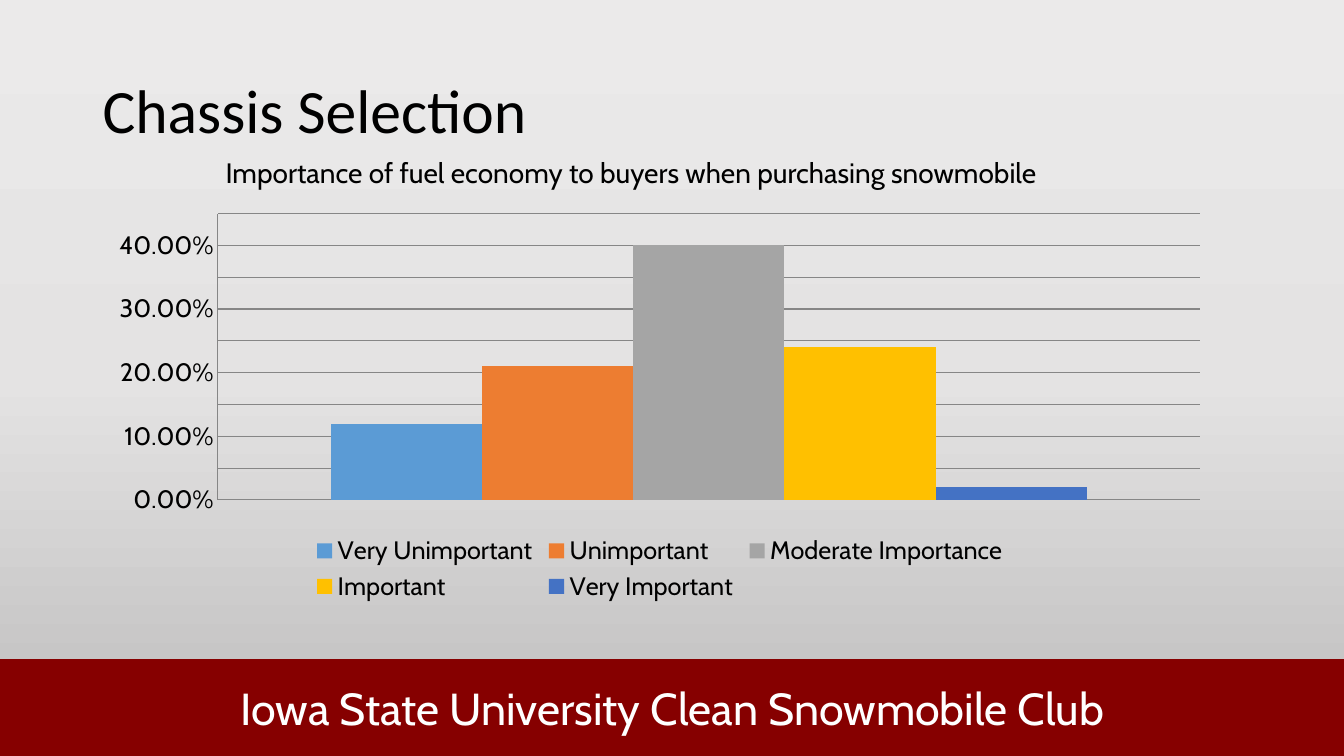
from copy import deepcopy
from dataclasses import dataclass

from pptx import Presentation
from pptx import util as u
from pptx.chart.chart import Chart
from pptx.chart.data import CategoryChartData
from pptx.dml.color import RGBColor
from pptx.enum import chart as charts, shapes, text
from pptx.oxml.ns import qn
from pptx.oxml.xmlchemy import OxmlElement
from pptx.shapes.base import BaseShape
from pptx.slide import Slide
from pptx.text.text import TextFrame

BLACK = RGBColor(0x00, 0x00, 0x00)
WHITE = RGBColor(0xFF, 0xFF, 0xFF)
CARDINAL = RGBColor(0x86, 0x00, 0x00)
GRID_GREY = RGBColor(0x86, 0x86, 0x86)
BACKGROUND = (
    (0, RGBColor(0xEB, 0xEA, 0xEA)),
    (0.5, RGBColor(0xE4, 0xE3, 0xE3)),
    (1, RGBColor(0xBD, 0xBC, 0xBC)),
)


@dataclass(frozen=True)
class Area:
    left: float
    top: float
    width: float
    height: float

    def lengths(self) -> tuple[u.Length, ...]:
        return tuple(u.Cm(value) for value in (self.left, self.top, self.width, self.height))


@dataclass(frozen=True)
class Answer:
    name: str
    share: float
    color: RGBColor


ANSWERS = (
    Answer("Very Unimportant", 0.12, RGBColor(0x5B, 0x9B, 0xD5)),
    Answer("Unimportant", 0.21, RGBColor(0xED, 0x7D, 0x31)),
    Answer("Moderate Importance", 0.4, RGBColor(0xA5, 0xA5, 0xA5)),
    Answer("Important", 0.24, RGBColor(0xFF, 0xC0, 0x00)),
    Answer("Very Important", 0.02, RGBColor(0x44, 0x72, 0xC4)),
)


def paint_background(page: Slide) -> None:
    fill = page.background.fill
    fill.gradient()
    fill.gradient_angle = 270
    stop_list = page.element.find(".//" + qn("a:gsLst"))
    stop_list.append(deepcopy(stop_list[-1]))
    for stop, (position, color) in zip(fill.gradient_stops, BACKGROUND):
        stop.position = position
        stop.color.rgb = color


def write_line(frame: TextFrame, wording: str, size: int, font: str, color: RGBColor,
               align: text.PP_ALIGN = text.PP_ALIGN.LEFT, spacing: float = 0.9,
               anchor: text.MSO_ANCHOR = text.MSO_ANCHOR.MIDDLE) -> None:
    frame.text = wording
    frame.word_wrap = True
    frame.auto_size = text.MSO_AUTO_SIZE.NONE
    frame.vertical_anchor = anchor
    para = frame.paragraphs[0]
    para.alignment = align
    para.line_spacing = spacing
    para.space_before = u.Pt(0)
    span = para.runs[0].font
    span.size, span.name = u.Pt(size), font
    span.color.rgb = color


def place(shape: BaseShape, area: Area) -> None:
    shape.left, shape.top, shape.width, shape.height = area.lengths()


def remove_bullet(frame: TextFrame) -> None:
    properties = frame.paragraphs[0]._p.get_or_add_pPr()
    properties.set("marL", "0")
    properties.set("indent", "0")
    properties.append(OxmlElement("a:buNone"))


def add_club_band(page: Slide) -> None:
    band = page.shapes.add_shape(shapes.MSO_SHAPE.RECTANGLE,
                                 *Area(0, 16.61, 33.91, 2.44).lengths())
    band.shadow.inherit = False
    band.fill.solid()
    band.fill.fore_color.rgb = CARDINAL
    band.line.fill.background()
    write_line(band.text_frame, "Iowa State University Clean Snowmobile Club", 32, "Cabin",
               WHITE, text.PP_ALIGN.CENTER, 1)


def format_axes(chart: Chart) -> None:
    chart.category_axis.visible = False
    axis = chart.value_axis
    axis.minimum_scale, axis.maximum_scale, axis.major_unit = 0, 0.45, 0.05
    axis.major_tick_mark = axis.minor_tick_mark = charts.XL_TICK_MARK.NONE
    axis.tick_labels.number_format = "0.00%"
    axis.tick_labels.number_format_is_linked = False
    axis.has_major_gridlines = True
    for line in (axis.format.line, axis.major_gridlines.format.line):
        line.color.rgb = GRID_GREY
        line.width = u.Pt(0.75)


def add_importance_chart(page: Slide) -> None:
    data = CategoryChartData(number_format="0.00%")
    data.categories = ["1"]
    for answer in ANSWERS:
        data.add_series(answer.name, [answer.share])
    chart = page.shapes.add_chart(charts.XL_CHART_TYPE.COLUMN_CLUSTERED,
                                  *Area(2.44, 5.18, 28.37, 10.11).lengths(), data).chart
    chart.has_title = False
    chart.font.size, chart.font.name = u.Pt(18), "Cabin"
    chart.font.color.rgb = BLACK
    chart.has_legend = True
    chart.legend.position = charts.XL_LEGEND_POSITION.BOTTOM
    chart.legend.include_in_layout = False
    plot = chart.plots[0]
    plot.vary_by_categories = False
    plot.gap_width, plot.overlap = 150, 0
    for series, answer in zip(plot.series, ANSWERS):
        series.format.fill.solid()
        series.format.fill.fore_color.rgb = answer.color
    format_axes(chart)


def main() -> None:
    deck = Presentation()
    deck.slide_width, deck.slide_height = u.Cm(33.87), u.Cm(19.05)
    page = deck.slides.add_slide(deck.slide_layouts[1])
    paint_background(page)
    add_club_band(page)
    title, body = page.placeholders
    place(title, Area(2.33, 1.02, 29.21, 3.68))
    write_line(title.text_frame, "Chassis Selection", 44, "Calibri", BLACK)
    place(body, Area(5.43, 3.89, 24.36, 1.68))
    write_line(body.text_frame, "Importance of fuel economy to buyers when purchasing snowmobile",
               20, "Cabin", BLACK, anchor=text.MSO_ANCHOR.TOP)
    remove_bullet(body.text_frame)
    add_importance_chart(page)
    deck.save("out.pptx")


if __name__ == "__main__":
    main()
